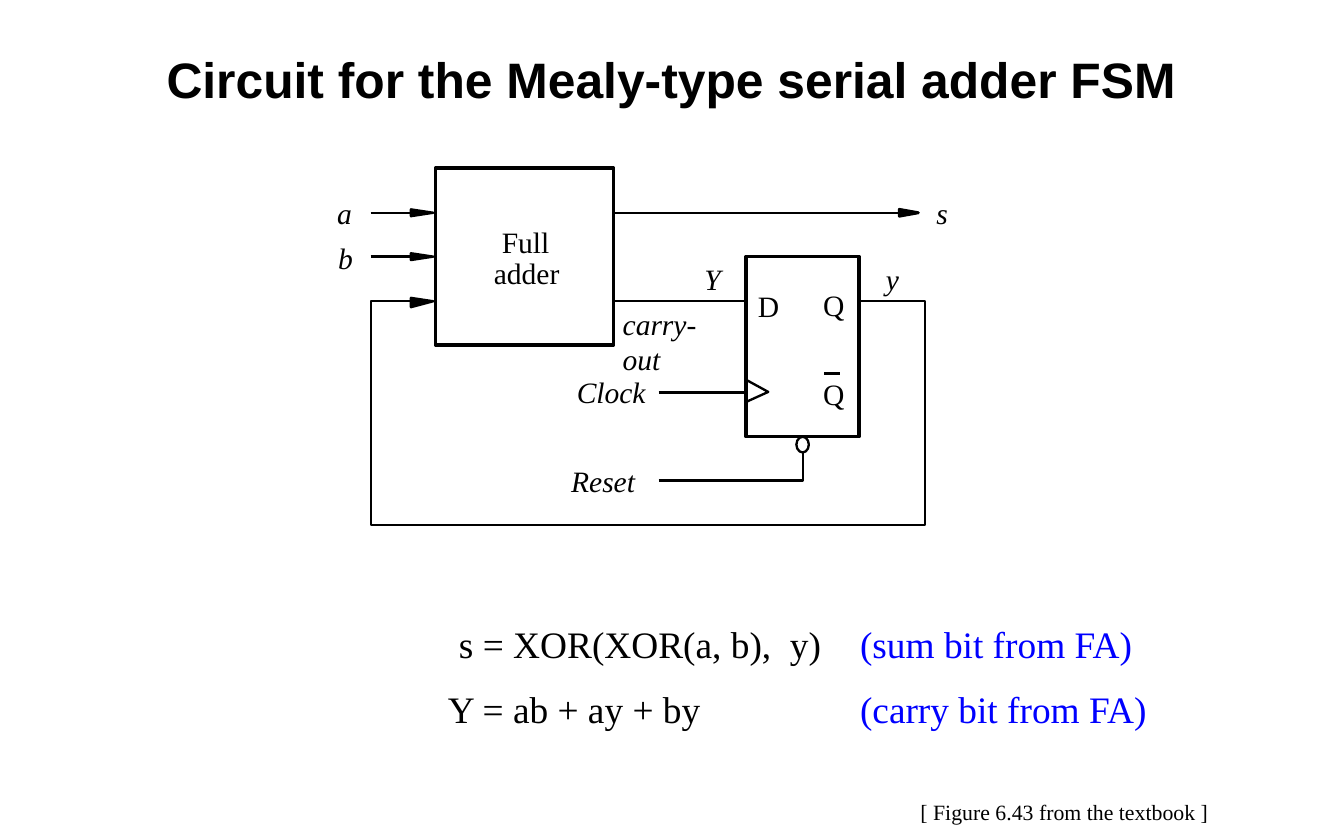
"""Build the slide showing the circuit of the Mealy-type serial adder."""
import pptx
import pptx.dml.color
import pptx.enum.shapes
import pptx.enum.text
import pptx.oxml
import pptx.util
from pptx.oxml.ns import qn

Pt = pptx.util.Pt
MSO_SHAPE = pptx.enum.shapes.MSO_SHAPE
COLORS = {name: pptx.dml.color.RGBColor.from_string(value) for name, value in
          {"ink": "000000", "paper": "FFFFFF", "note": "0000FF"}.items()}


def style_shape(shape, fill, line_width):
    shape.shadow.inherit = False
    if fill:
        shape.fill.solid()
        shape.fill.fore_color.rgb = COLORS[fill]
    else:
        shape.fill.background()
    shape.line.color.rgb = COLORS["ink"]
    shape.line.width = Pt(line_width)


def add_text(text, left, top, width, height, size, margin=0, color="ink", wrap=False):
    box = slide.shapes.add_textbox(Pt(left), Pt(top), Pt(width), Pt(height))
    frame = box.text_frame
    frame.word_wrap = wrap
    frame.margin_left = frame.margin_right = Pt(margin)
    frame.margin_top = frame.margin_bottom = Pt(margin / 2)
    frame.text = text
    font = frame.paragraphs[0].runs[0].font
    font.name = "Times New Roman"
    font.size = Pt(size)
    font.color.rgb = COLORS[color]
    return frame, font


presentation = pptx.Presentation()
presentation.slide_width = Pt(864)
presentation.slide_height = Pt(540)
slide = presentation.slides.add_slide(presentation.slide_layouts[6])

input_left, arrow_left, adder_left, adder_right = 238.3, 264.2, 280, 394.9
flip_flop_left, flip_flop_right, output_right = 479.5, 552.2, 594.7
sum_y, b_y, carry_y, clock_y, reset_y = 136.8, 165, 193.7, 252.3, 308.9
bubble_x, bubble_top, feedback_y = 516, 280.8, 337.7

blocks = [
    (MSO_SHAPE.RECTANGLE, adder_left, 108, 114.5, 113.8, None, 2.25),
    (MSO_SHAPE.RECTANGLE, flip_flop_left, 164.9, 72.7, 115.9, "paper", 2.25),
]
bubble = (MSO_SHAPE.OVAL, bubble_x - 4, bubble_top, 8, 10.1, "paper", 1.5)

outlines = [
    ([(423.4, reset_y), (bubble_x, reset_y), (bubble_x, bubble_top)], False, None, 1.5),
    ([(flip_flop_left, 258.5), (493.9, 252), (flip_flop_left, 244.1)], False, None, 1.5),
    ([(arrow_left, carry_y), (input_left, carry_y), (input_left, feedback_y),
      (output_right, feedback_y), (output_right, carry_y), (flip_flop_right, carry_y)],
     False, None, 1.5),
]
for left, y, length, drop, width in [
    (arrow_left, sum_y, 14.4, 2.2, 1.5),
    (arrow_left, b_y, 14.4, 2.2, 1.5),
    (arrow_left, carry_y, 14.4, 3.8, 1.5),
    (578.2, sum_y, 12.2, 2.2, 1.88),
]:
    head = [(left, y + drop), (left + length, y), (left, y - 2.2), (left, y)]
    outlines.append((head, True, "ink", width))

for points, closed, fill, width in outlines:
    start, *rest = [(Pt(x), Pt(y)) for x, y in points]
    builder = slide.shapes.build_freeform(*start)
    builder.add_line_segments(rest, close=closed)
    style_shape(builder.convert_to_shape(), fill, width)

for kind, left, top, width, height, fill, line_width in blocks + [bubble]:
    block = slide.shapes.add_shape(kind, Pt(left), Pt(top), Pt(width), Pt(height))
    style_shape(block, fill, line_width)

for start_x, end_x, y, width in [
    (input_left, arrow_left, sum_y, 1.5),
    (input_left, arrow_left, b_y, 1.5),
    (adder_right, 578.2, sum_y, 1.5),
    (adder_right, flip_flop_left, carry_y, 1.5),
    (423.4, flip_flop_left, clock_y, 1.5),
    (529.9, 540, 240, 1.88),
]:
    wire = slide.shapes.add_connector(
        pptx.enum.shapes.MSO_CONNECTOR.STRAIGHT, Pt(start_x), Pt(y), Pt(end_x), Pt(y))
    wire.line.color.rgb = COLORS["ink"]
    wire.line.width = Pt(width)
    wire._element.spPr.append(pptx.oxml.xmlchemy.OxmlElement("a:effectLst"))

clock_mark = slide.shapes[1]
slide.shapes._spTree.remove(clock_mark._element)
slide.shapes._spTree.append(clock_mark._element)

for text, left, top, width, italic in [
    ("Full", 322.6, 144, 31, False),
    ("adder", 317.5, 164.2, 42.5, False),
    ("D", 487.2, 185, 13.7, False),
    ("Q", 529.2, 184.3, 13.7, False),
    ("Q", 529.2, 241.9, 13.7, False),
    ("a", 216.7, 125.3, 8.6, True),
    ("b", 217.4, 154.1, 9.4, True),
    ("s", 601.9, 125.3, 7.2, True),
    ("Clock", 370.8, 240.5, 45.4, True),
    ("Reset", 367.2, 297.4, 42.5, True),
    ("Y", 452.9, 167.8, 13.7, True),
    ("y", 569.5, 167.8, 9.4, True),
    ("carry-out", 400.3, 196.6, 68, True),
]:
    frame, font = add_text(text, left, top, width, 23, 19, wrap=text == "carry-out")
    font.italic = italic

for text, left, top, width, size, color in [
    ("s = XOR(XOR(a, b),  y)", 288, 396, 249.8, 24, "ink"),
    ("Y = ab + ay + by", 280.8, 437.8, 178.6, 24, "ink"),
    ("(sum bit from FA)", 545.8, 396, 190.8, 24, "note"),
    ("(carry bit from FA)", 545.8, 437.8, 200.2, 24, "note"),
    ("[ Figure 6.43 from the textbook ]", 584.6, 509.8, 200.9, 14, "ink"),
]:
    add_text(text, left, top, width, 1.5 * size, size, 7.2, color)

frame, font = add_text("Circuit for the Mealy-type serial adder FSM",
                       72, 23.8, 720, 54, 32, 7.2, wrap=True)
frame.vertical_anchor = pptx.enum.text.MSO_ANCHOR.MIDDLE
frame.paragraphs[0].alignment = pptx.enum.text.PP_ALIGN.CENTER
font.name = "Arial"
font.bold = True

presentation.save("out.pptx")
